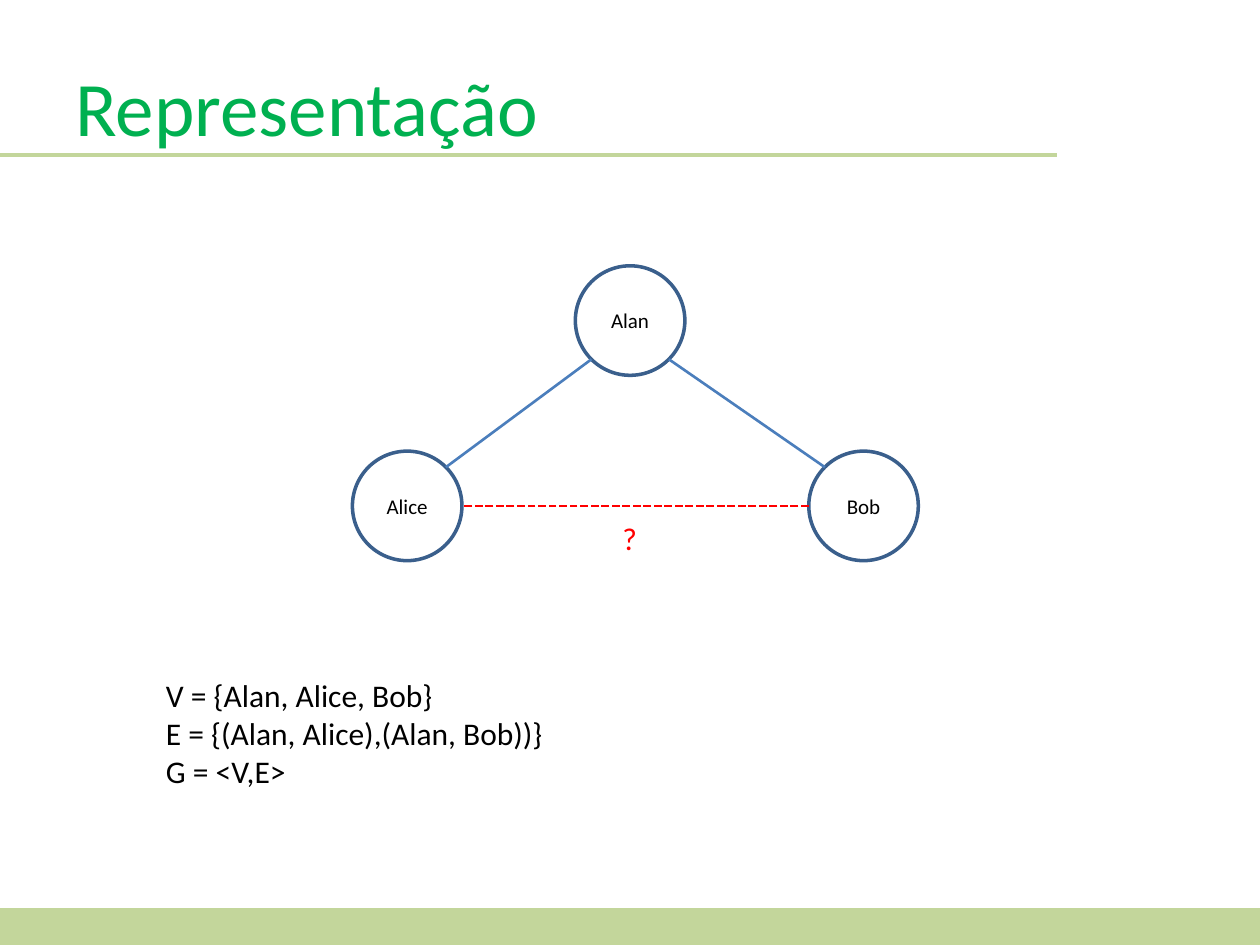
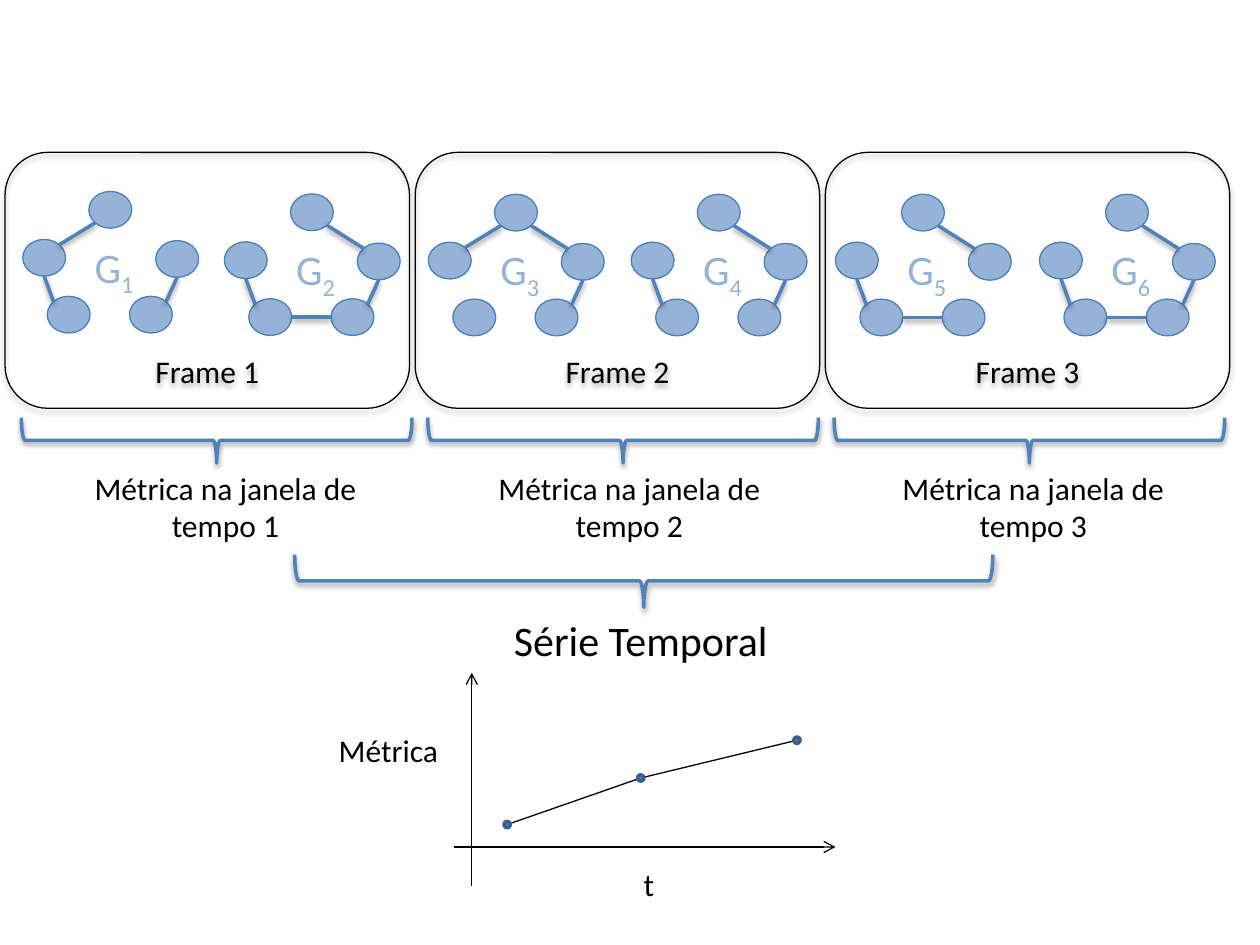
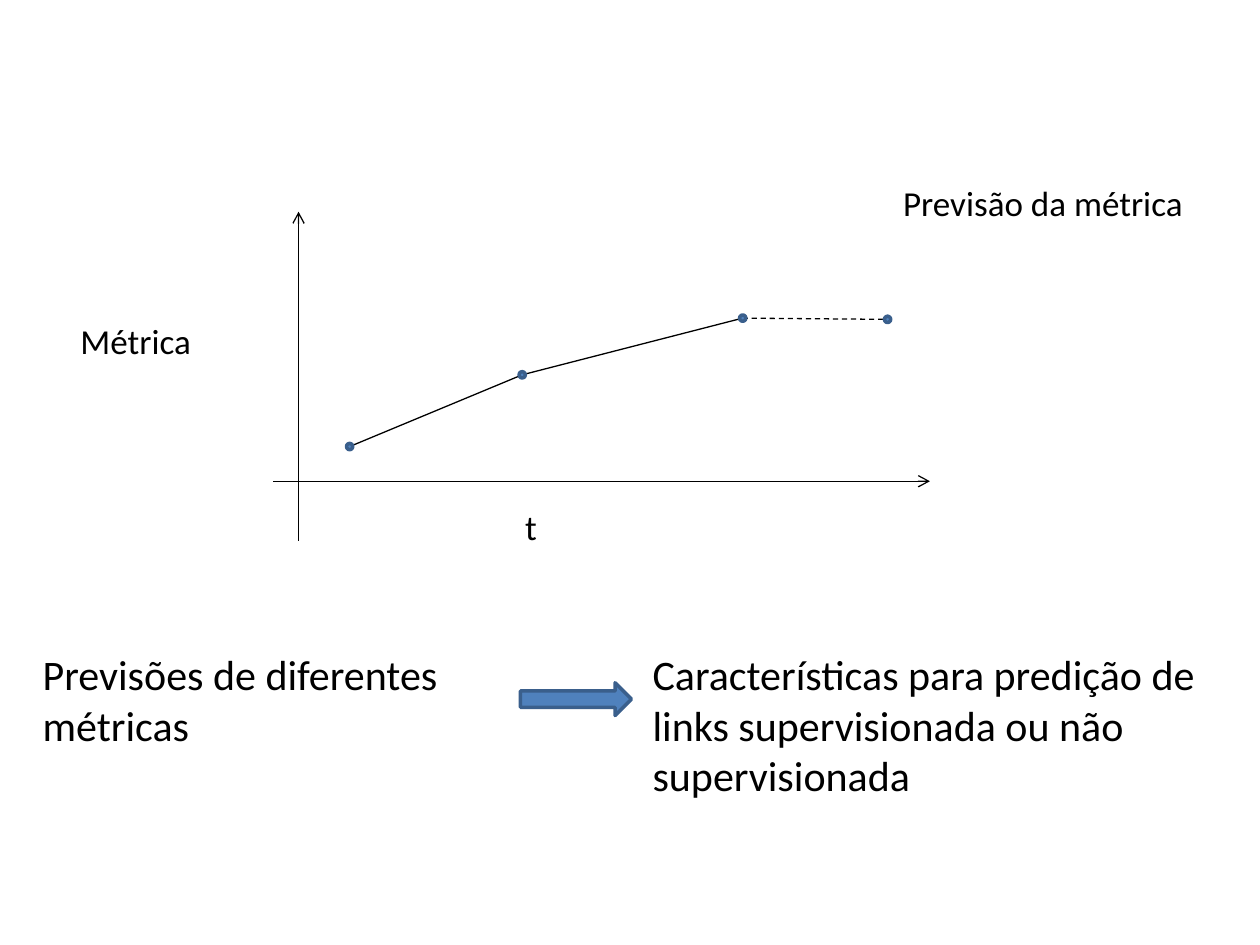
from math import cos, radians, sin

from lxml.etree import SubElement
from pptx import Presentation
from pptx.dml.color import RGBColor
from pptx.enum.dml import MSO_LINE
from pptx.enum.shapes import MSO_CONNECTOR, MSO_SHAPE
from pptx.enum.text import MSO_ANCHOR, MSO_AUTO_SIZE, PP_ALIGN
from pptx.oxml.ns import qn
from pptx.util import Pt

FONT = "Calibri"
BLACK = RGBColor(0x00, 0x00, 0x00)
GREEN = RGBColor(0x00, 0xB0, 0x50)
PALE_GREEN = RGBColor(0xC3, 0xD6, 0x9B)
RED = RGBColor(0xFF, 0x00, 0x00)
BLUE = RGBColor(0x4F, 0x81, 0xBD)
EDGE_BLUE = RGBColor(0x4B, 0x7E, 0xBC)
DARK_BLUE = RGBColor(0x3A, 0x5F, 0x8C)
LIGHT_BLUE = RGBColor(0x95, 0xB3, 0xD7)

NODE_SIZE = (24.5, 21)
NODE_OFFSETS = {
    "left": (0, 0),
    "top": (37.8, -27.4),
    "bottom left": (14, 32.5),
    "bottom right": (61, 32.5),
    "right": (76, 0.7),
}
# Each edge: first node, angle on its rim, second node, angle on its rim
LEFT_TOP = ("left", -45, "top", 135)
TOP_RIGHT = ("top", 45, "right", -135)
LEFT_SIDE = ("left", 90, "bottom left", -135)
RIGHT_SIDE = ("right", 90, "bottom right", -45)
BASE = ("bottom left", 0, "bottom right", 180)
GRAPHS = [
    (13, 136.8, [LEFT_TOP, LEFT_SIDE, RIGHT_SIDE]),
    (128.2, 138.2, [TOP_RIGHT, LEFT_SIDE, RIGHT_SIDE, BASE]),
    (244.8, 138.4, [LEFT_TOP, TOP_RIGHT, RIGHT_SIDE]),
    (360.7, 138.4, [TOP_RIGHT, LEFT_SIDE, RIGHT_SIDE]),
    (477.4, 138.4, [TOP_RIGHT, LEFT_SIDE, BASE]),
    (594, 138.4, [TOP_RIGHT, LEFT_SIDE, RIGHT_SIDE, BASE]),
]


def write_text(frame, text, *, size=18, color=BLACK, align=PP_ALIGN.LEFT,
               anchor=MSO_ANCHOR.TOP, subscript=""):
    """Write one paragraph per line of text, with an optional subscript at the end."""
    frame.vertical_anchor = anchor
    for index, line in enumerate(text.split("\n")):
        paragraph = frame.add_paragraph() if index else frame.paragraphs[0]
        paragraph.alignment = align
        paragraph.font.name = FONT
        paragraph.font.size = Pt(size)
        paragraph.font.color.rgb = color
        runs = [paragraph.add_run()]
        runs[0].text = line
        if subscript:
            runs.append(paragraph.add_run())
            runs[1].text = subscript
            runs[1]._r.get_or_add_rPr().set("baseline", "-25000")
        for run in runs:
            run.font.name = FONT
            run.font.size = Pt(size)
            run.font.color.rgb = color


def add_text(slide, text, left, top, width, height, *, wrap=False, grow=True, **text_format):
    box = slide.shapes.add_textbox(Pt(left), Pt(top), Pt(width), Pt(height))
    box.text_frame.word_wrap = wrap
    box.text_frame.auto_size = MSO_AUTO_SIZE.SHAPE_TO_FIT_TEXT if grow else MSO_AUTO_SIZE.NONE
    write_text(box.text_frame, text, **text_format)


def cast_shadow(properties, opacity, distance):
    effects = properties.find(qn("a:effectLst"))
    shadow = SubElement(effects, qn("a:outerShdw"), blurRad=str(Pt(3.1)),
                        dist=str(Pt(distance)), dir="5400000", rotWithShape="0")
    color = SubElement(shadow, qn("a:srgbClr"), val="000000")
    SubElement(color, qn("a:alpha"), val=str(opacity * 1000))


def add_shape(slide, kind, left, top, width, height, *, fill=None, line=None, weight=2):
    shape = slide.shapes.add_shape(kind, Pt(left), Pt(top), Pt(width), Pt(height))
    shape.shadow.inherit = False
    if fill is None:
        shape.fill.background()
    else:
        shape.fill.solid()
        shape.fill.fore_color.rgb = fill
    if line is None:
        shape.line.fill.background()
    else:
        shape.line.color.rgb = line
        shape.line.width = Pt(weight)
    return shape


def add_line(slide, start, end, *, color=BLACK, weight=0.75, dash=None,
             arrow=False, shadow=False):
    line = slide.shapes.add_connector(MSO_CONNECTOR.STRAIGHT, Pt(start[0]), Pt(start[1]),
                                      Pt(end[0]), Pt(end[1]))
    line.line.color.rgb = color
    line.line.width = Pt(weight)
    if dash:
        line.line.dash_style = dash
    properties = line._element.spPr
    if arrow:
        SubElement(properties.find(qn("a:ln")), qn("a:tailEnd"), type="arrow")
    SubElement(properties, qn("a:effectLst"))
    if shadow:
        cast_shadow(properties, 38, 1.6)


def rim_point(oval, degrees):
    """Return the point on an oval's outline, in points, clockwise from its right end."""
    angle = radians(degrees)
    return (oval.left.pt + oval.width.pt / 2 * (1 + cos(angle)),
            oval.top.pt + oval.height.pt / 2 * (1 + sin(angle)))


def add_edge(slide, first, first_angle, second, second_angle, **line_format):
    add_line(slide, rim_point(first, first_angle), rim_point(second, second_angle),
             **line_format)


def add_person(slide, name, left, top):
    person = add_shape(slide, MSO_SHAPE.OVAL, left, top, 62.6, 62.6, line=DARK_BLUE)
    write_text(person.text_frame, name, size=12, align=PP_ALIGN.CENTER,
               anchor=MSO_ANCHOR.MIDDLE)
    return person


def add_graph(slide, number, left, top, edges):
    nodes = {
        name: add_shape(slide, MSO_SHAPE.OVAL, left + x, top + y, *NODE_SIZE,
                        fill=LIGHT_BLUE, line=EDGE_BLUE, weight=0.75)
        for name, (x, y) in NODE_OFFSETS.items()
    }
    for first, first_angle, second, second_angle in edges:
        add_edge(slide, nodes[first], first_angle, nodes[second], second_angle,
                 color=BLUE, weight=2, shadow=True)
    add_text(slide, "G", left + 34, top - 2.5, 40, 33, size=24, color=LIGHT_BLUE,
             subscript=str(number))


def add_brace(slide, left, top, width, height):
    """Add a brace that is turned to point down; the box is the one before turning."""
    brace = add_shape(slide, MSO_SHAPE.LEFT_BRACE, left, top, width, height, line=BLUE)
    brace.rotation = 270
    cast_shadow(brace._element.spPr, 38, 1.6)


def add_frame(slide, number, left):
    frame = add_shape(slide, MSO_SHAPE.ROUNDED_RECTANGLE, left, 87.1, 231.1, 146.2,
                      line=BLACK, weight=0.75)
    cast_shadow(frame._element.spPr, 35, 1.8)
    write_text(frame.text_frame, f"Frame {number}", align=PP_ALIGN.CENTER,
               anchor=MSO_ANCHOR.BOTTOM)


def add_time_series(slide, time_axis, metric_axis, values, forecast=None):
    """Draw two axes, given as (start, end), and joined dots; the forecast is dashed."""
    for start, end in zip(values, values[1:]):
        add_line(slide, start, end)
    for axis in (time_axis, metric_axis):
        add_line(slide, *axis, arrow=True)
    dots = list(values)
    if forecast:
        add_line(slide, values[-1], forecast, dash=MSO_LINE.DASH)
        dots.append(forecast)
    for x, y in dots:
        add_shape(slide, MSO_SHAPE.OVAL, x - 1.8, y - 1.8, 3.6, 3.6,
                  fill=BLUE, line=DARK_BLUE)


def build_representation(slide):
    add_text(slide, "Representação", 36, 15.1, 648, 90, wrap=True, grow=False,
             size=44, color=GREEN, anchor=MSO_ANCHOR.MIDDLE)
    add_line(slide, (0, 88.5), (604, 88.5), color=PALE_GREEN, weight=2.25)
    add_shape(slide, MSO_SHAPE.RECTANGLE, 0, 519, 720, 21, fill=PALE_GREEN)

    alan = add_person(slide, "Alan", 328.8, 151.9)
    alice = add_person(slide, "Alice", 201.4, 257.8)
    bob = add_person(slide, "Bob", 462.2, 257.8)
    add_edge(slide, alan, 135, alice, -45, color=EDGE_BLUE, weight=1.5)
    add_edge(slide, alan, 45, bob, -135, color=EDGE_BLUE, weight=1.5)
    add_edge(slide, bob, 180, alice, 0, color=RED, weight=1.5, dash=MSO_LINE.SQUARE_DOT)
    add_text(slide, "?", 348.5, 293, 23, 28.8, color=RED)
    add_text(slide, "V = {Alan, Alice, Bob}\nE = {(Alan, Alice),(Alan, Bob))}\nG = <V,E>",
             87.8, 383, 232.6, 72.7)


def build_frames(slide):
    add_brace(slide, 352.8, 132.5, 30.2, 398.9)
    for index in range(3):
        number = index + 1
        add_brace(slide, 110.9 + 232.2 * index, 140, 25.9, 223.2)
        add_frame(slide, number, 2.9 + 234.35 * index)
        add_text(slide, f"Métrica na janela de tempo {number}", 44.6 + 230.8 * index,
                 264.2, 168.5, 51.1, wrap=True, align=PP_ALIGN.CENTER)
    for number, graph in enumerate(GRAPHS, 1):
        add_graph(slide, number, *graph)

    add_text(slide, "Série Temporal", 286.6, 347.8, 161.3, 36, size=24)
    add_time_series(slide, ((259.2, 484), (477.4, 484)), ((269.6, 506.2), (269.6, 384.5)),
                    [(289.8, 471.2), (366.1, 444.6), (455.4, 423)])
    add_text(slide, "t", 360.7, 491, 21.6, 28.8)
    add_text(slide, "Métrica", 186.5, 414, 72, 28.8)


def build_forecast(slide):
    add_time_series(slide, ((156.2, 275), (531.4, 275)), ((170.6, 308.9), (170.6, 121)),
                    [(199.8, 255.2), (298.4, 214.2), (424.4, 181.8)],
                    forecast=(507.2, 182.5))
    add_text(slide, "t", 293, 285.1, 22.3, 31.7, size=20)
    add_text(slide, "Métrica", 38.9, 179.2, 78.5, 31.7, size=20)
    add_text(slide, "Previsão da métrica", 509, 100.1, 200.2, 31.7, wrap=True, size=20)
    add_text(slide, "Previsões de diferentes métricas", 17.3, 367.2, 275, 65.5,
             wrap=True, size=24)
    add_text(slide, "Características para predição de links supervisionada ou não supervisionada",
             365.8, 367.2, 354, 94.3, wrap=True, size=24)
    add_shape(slide, MSO_SHAPE.RIGHT_ARROW, 297.4, 390.2, 63.4, 18.7,
              fill=BLUE, line=DARK_BLUE)


def main():
    presentation = Presentation()
    presentation.slide_width = Pt(720)
    presentation.slide_height = Pt(540)
    blank_layout = presentation.slide_layouts[6]
    for build in (build_representation, build_frames, build_forecast):
        build(presentation.slides.add_slide(blank_layout))
    presentation.save("out.pptx")


if __name__ == "__main__":
    main()
